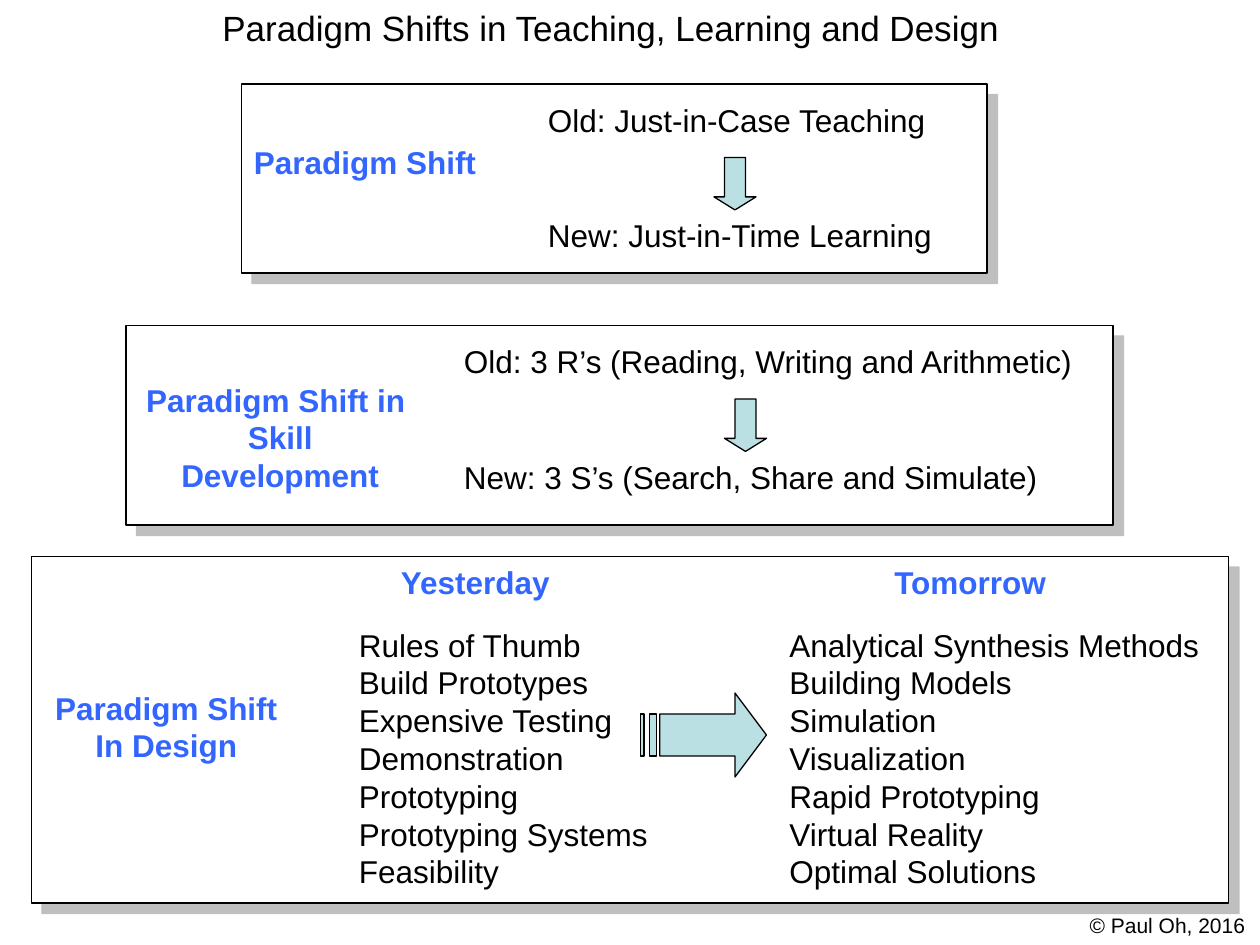
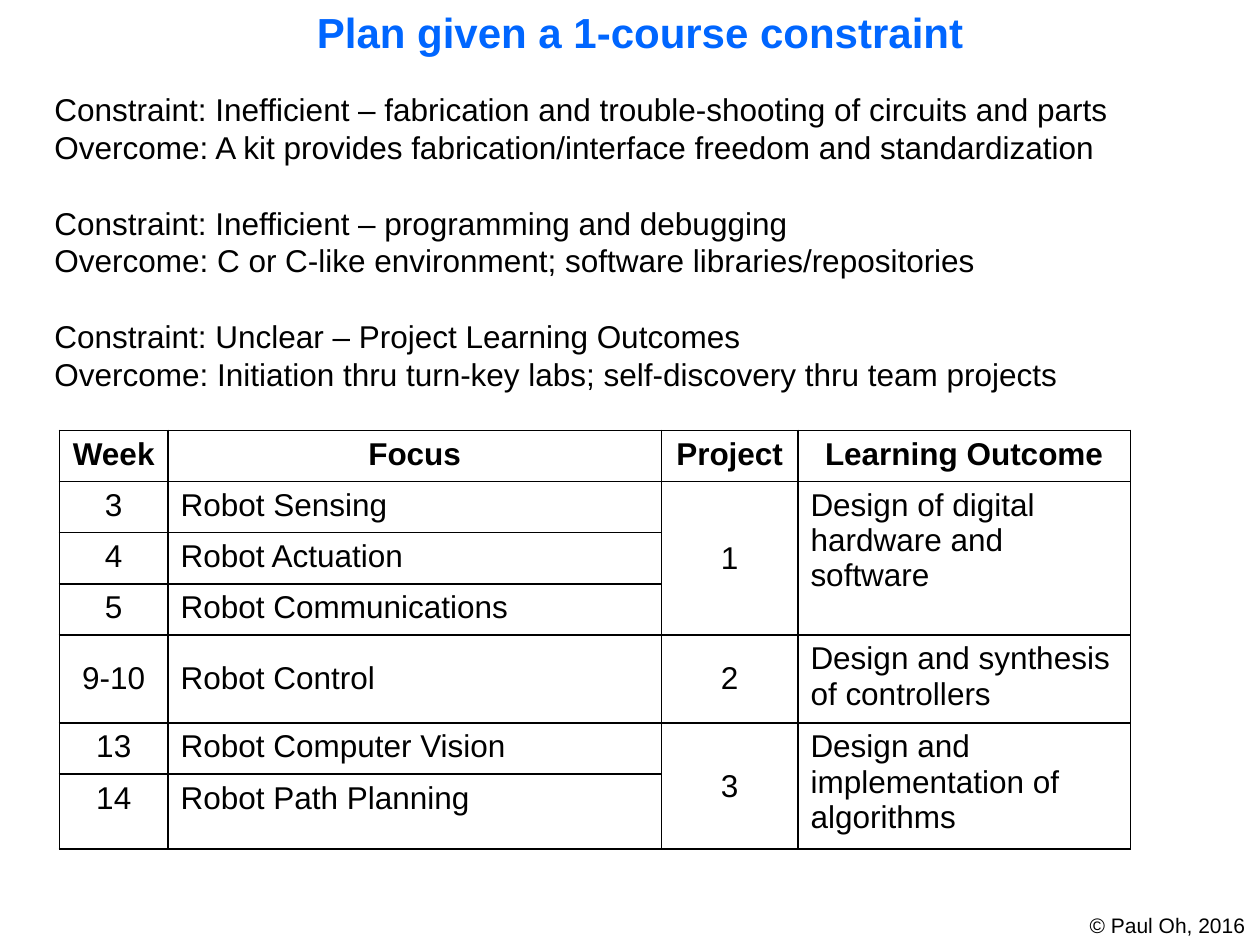
from dataclasses import dataclass
from lxml.etree import SubElement as Sub
from pptx import Presentation
from pptx.dml.color import RGBColor as Rgb
from pptx.enum.shapes import MSO_SHAPE as Kind
from pptx.enum.text import MSO_ANCHOR as Anchor, PP_ALIGN as Align
from pptx.oxml.ns import qn
from pptx.util import Pt


@dataclass(frozen=True)
class Theme:
    font: str = "Arial"
    ink: str = "000000"
    paper: str = "FFFFFF"
    blue: str = "3366FF"
    bright: str = "0066FF"
    mint: str = "BBE0E3"
    shade: str = "808080"
    body: int = 18
    title: int = 20
    head: int = 24
    small: int = 12
    lead: float = 1.2
    edge: float = 0.75
    rule: int = 1


T = Theme()
STYLES = {
    "body": (T.body, T.ink, False),
    "label": (T.body, T.blue, True),
    "title": (T.title, T.ink, False),
    "head": (T.head, T.bright, True),
    "foot": (T.small, T.ink, False),
}
FOOT = ("foot", (615.6, 517.7, 104.4, 21.6), ["© Paul Oh, 2016"])

PANELS = [(18, 318, 684, 198), (138, 48, 426, 108), (72, 186, 564, 114)]
DOWNS = [(408, 90), (414, 228)]
SHIFTS = [
    ("title", (120, 0, 460, 31), ["Paradigm Shifts in Teaching, Learning and Design"]),
    ("label", (138, 78, 142, 28.8), ["Paradigm Shift"]),
    ("body", (306, 54, 232.5, 28.8), ["Old: Just-in-Case Teaching"]),
    ("body", (306, 120, 235, 28.8), ["New: Just-in-Time Learning"]),
    ("label", (75.6, 214, 169, 50.4), ["Paradigm Shift in ", "Skill Development"]),
    ("body", (258, 192, 363.5, 28.8), ["Old: 3 R’s (Reading, Writing and Arithmetic)"]),
    ("body", (258, 258, 343, 28.8), ["New: 3 S’s (Search, Share and Simulate)"]),
    ("label", (24, 390, 142, 50.4), ["Paradigm Shift", "In Design"]),
    ("label", (222, 318, 101, 28.8), ["Yesterday"]),
    ("label", (504, 318, 102, 28.8), ["Tomorrow"]),
    ("body", (198, 354, 179.3, 158.4), [
        "Rules of Thumb", "Build Prototypes", "Expensive Testing", "Demonstration",
        "Prototyping", "Prototyping Systems", "Feasibility"]),
    ("body", (444, 354, 248.4, 158.4), [
        "Analytical Synthesis Methods", "Building Models", "Simulation", "Visualization",
        "Rapid Prototyping", "Virtual Reality", "Optimal Solutions"]),
]
ARROW = [
    [(420, 396), (420, 408), (377, 408), (377, 432), (420, 432), (420, 444), (438, 420)],
    [(371, 408), (371, 432), (375, 432), (375, 408)],
    [(366, 408), (366, 432), (368, 432), (368, 408)],
]

PLAN = ("head", (174, 0, 394, 36), ["Plan given a 1-course constraint"])
LIMITS = ("body", (24, 48, 631.5, 181.4), [
    "Constraint: Inefficient – fabrication and trouble-shooting of circuits and parts",
    "Overcome: A kit provides fabrication/interface freedom and standardization",
    "Constraint: Inefficient – programming and debugging",
    "Overcome: C or C-like environment; software libraries/repositories",
    "Constraint: Unclear – Project Learning Outcomes",
    "Overcome: Initiation thru turn-key labs; self-discovery thru team projects",
])
SPOT = (34, 246)
COLS = [62, 282, 78, 190]
ROWS = [29.2, 29.2, 29.2, 29.2, 50.4, 29.2, 42.8]
GRID = [
    ("Week", "Focus", "Project", "Learning Outcome"),
    ("3", "Robot Sensing", "1", "Design of digital hardware and software"),
    ("4", "Robot Actuation", "", ""),
    ("5", "Robot Communications", "", ""),
    ("9-10", "Robot Control", "2", "Design and synthesis of controllers"),
    ("13", "Robot Computer Vision", "3", "Design and implementation of algorithms"),
    ("14", "Robot Path Planning", "", ""),
]
SPANS = [(1, 3), (5, 6)]
MID = 4


def pts(box):
    return [Pt(n) for n in box]


def style(para, role):
    size, tint, bold = STYLES[role]
    for run in para.runs:
        font = run.font
        font.name, font.size, font.bold = T.font, Pt(size), bold
        font.color.rgb = Rgb.from_string(tint)


def say(slide, role, box, lines, pair=False):
    frame = slide.shapes.add_textbox(*pts(box)).text_frame
    frame.word_wrap = False
    frame.text = "\n".join(lines)
    step = Pt(STYLES[role][0] * T.lead)
    for i, para in enumerate(frame.paragraphs):
        para.line_spacing = step
        if role == "label" and len(lines) > 1:
            para.alignment = Align.CENTER
        if pair and i % 2 and i < len(lines) - 1:
            para.space_after = step
        style(para, role)


def paint(shape, fill):
    shape.shadow.inherit = False
    shape.fill.solid()
    shape.fill.fore_color.rgb = Rgb.from_string(fill)
    shape.line.color.rgb = Rgb.from_string(T.ink)
    shape.line.width = Pt(T.edge)


def panel(slide, box):
    shape = slide.shapes.add_shape(Kind.RECTANGLE, *pts(box))
    paint(shape, T.paper)
    glow = shape._element.spPr.find(qn("a:effectLst"))
    cast = Sub(glow, qn("a:outerShdw"), dist=str(Pt(8.5)), dir="2700000",
               algn="ctr", rotWithShape="0")
    tint = Sub(cast, qn("a:srgbClr"), val=T.shade)
    Sub(tint, qn("a:alpha"), val="50000")


def down(slide, spot):
    shape = slide.shapes.add_shape(Kind.DOWN_ARROW, *pts((*spot, 24, 30)))
    shape.adjustments[0] = 0.5
    shape.adjustments[1] = 0.31
    paint(shape, T.mint)


def sweep(slide):
    pen = slide.shapes.build_freeform(*ARROW[0][0], scale=float(Pt(1)))
    for i, part in enumerate(ARROW):
        if i:
            pen.move_to(*part[0])
        pen.add_line_segments(part[1:], close=True)
    paint(pen.convert_to_shape(), T.mint)


def frame_cell(cell):
    props = cell._tc.get_or_add_tcPr()
    for side in "LRTB":
        line = Sub(props, qn("a:ln" + side), w=str(Pt(T.rule)))
        Sub(Sub(line, qn("a:solidFill")), qn("a:srgbClr"), val=T.ink)
    cell.fill.solid()
    cell.fill.fore_color.rgb = Rgb.from_string(T.paper)


def chart_weeks(slide):
    box = (*SPOT, sum(COLS), sum(ROWS))
    table = slide.shapes.add_table(len(ROWS), len(COLS), *pts(box)).table
    table.first_row = table.horz_banding = False
    for col, wide in zip(table.columns, COLS):
        col.width = Pt(wide)
    for row, tall in zip(table.rows, ROWS):
        row.height = Pt(tall)
    for r, words in enumerate(GRID):
        for c, text in enumerate(words):
            cell = table.cell(r, c)
            frame_cell(cell)
            cell.text_frame.text = text
            para = cell.text_frame.paragraphs[0]
            style(para, "body")
            for run in para.runs:
                run.font.bold = r == 0
            if r == 0 or c in (0, 2):
                para.alignment = Align.CENTER
            if r and (c == 2 or (r == MID and c < 2)):
                cell.vertical_anchor = Anchor.MIDDLE
    for top, end in SPANS:
        for c in (2, 3):
            table.cell(top, c).merge(table.cell(end, c))


def main():
    deck = Presentation()
    deck.slide_width, deck.slide_height = Pt(720), Pt(540)
    first, second = [deck.slides.add_slide(deck.slide_layouts[6]) for _ in range(2)]
    for box in PANELS:
        panel(first, box)
    for item in SHIFTS:
        say(first, *item)
    for spot in DOWNS:
        down(first, spot)
    sweep(first)
    say(second, *PLAN)
    say(second, *LIMITS, pair=True)
    chart_weeks(second)
    for slide in (first, second):
        say(slide, *FOOT)
    deck.save("out.pptx")


if __name__ == "__main__":
    main()
